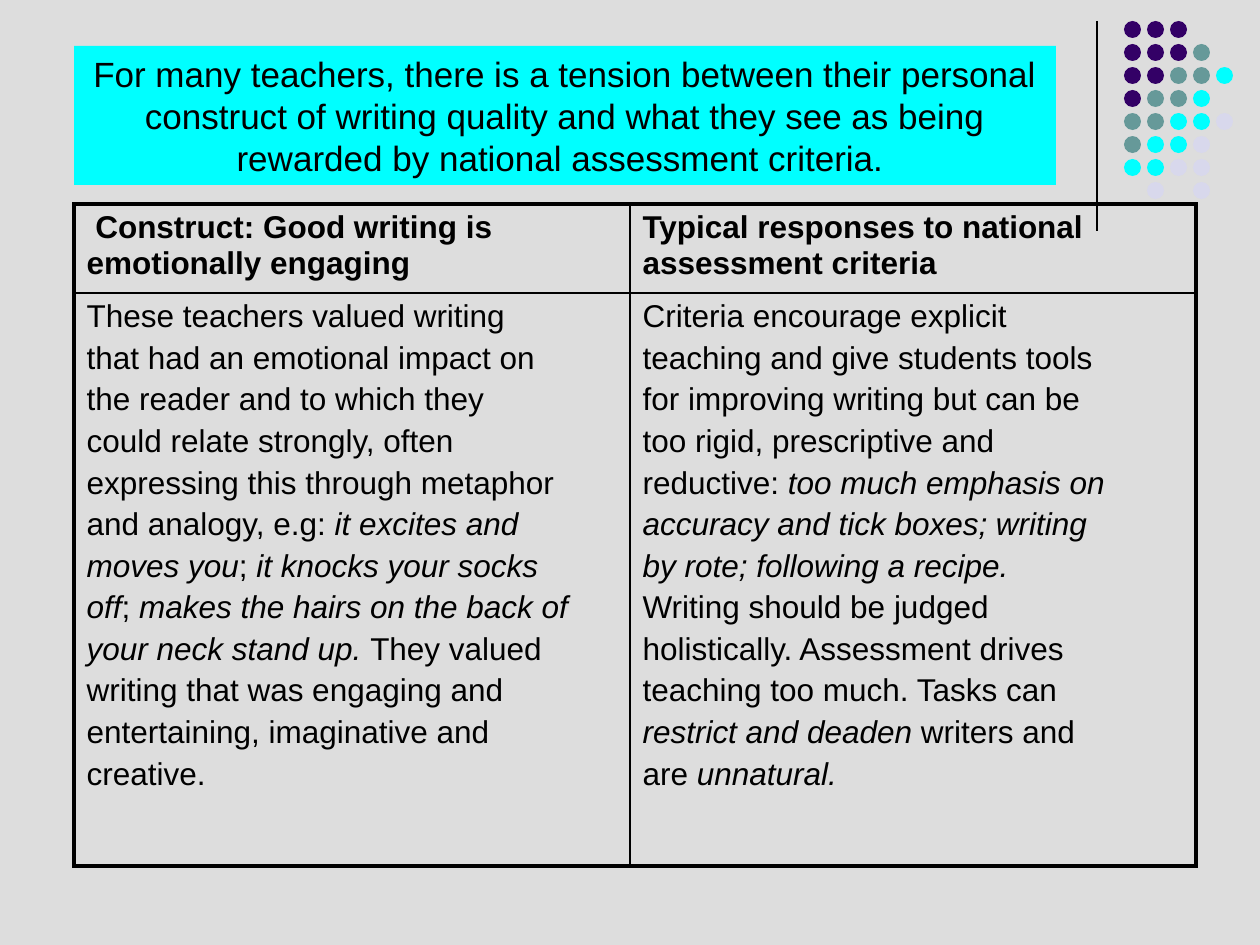
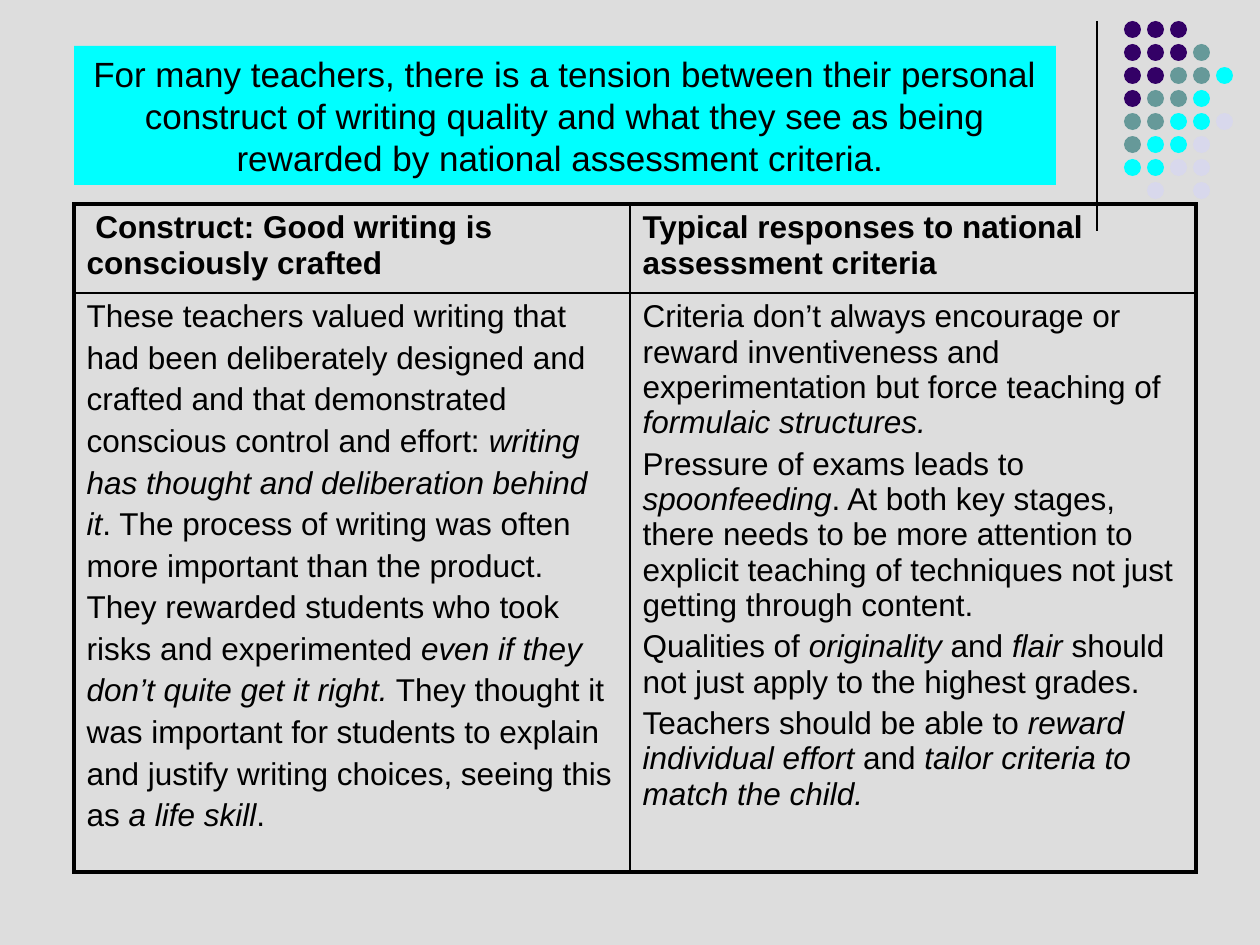
from dataclasses import dataclass

from pptx import Presentation
from pptx import util as u
from pptx.dml.color import RGBColor
from pptx.enum import shapes, text
from pptx.oxml import ns, xmlchemy

# Content: *asterisks* enclose italic wording
TITLE = ("For many teachers, there is a tension between their personal construct of writing "
         "quality and what they see as being rewarded by national assessment criteria. ")
RESPONSES_HEADING = "Typical responses to national assessment criteria"

SLIDES = [
    {
        "headings": [" Construct: Good writing is emotionally engaging", RESPONSES_HEADING],
        "bodies": [
            [
                "These teachers valued writing",
                "that had an emotional impact on",
                "the reader and to which they",
                "could relate strongly, often",
                "expressing this through metaphor",
                "and analogy, e.g: *it excites and*",
                "*moves you*; *it knocks your socks*",
                "*off*; *makes the hairs on the back of*",
                "*your neck stand up. *They valued",
                "writing that was engaging and",
                "entertaining, imaginative and",
                "creative.",
            ],
            [
                "Criteria encourage explicit",
                "teaching and give students tools",
                "for improving writing but can be",
                "too rigid, prescriptive and",
                "reductive: *too much emphasis on*",
                "*accuracy and tick boxes; writing*",
                "*by rote; following a recipe.*",
                "Writing should be judged",
                "holistically. Assessment drives",
                "teaching too much. Tasks can",
                "*restrict and deaden* writers and",
                "are *unnatural.*",
            ],
        ],
        "row_heights": [89, 573],
    },
    {
        "headings": [" Construct: Good writing is consciously crafted", RESPONSES_HEADING],
        "bodies": [
            [
                "These teachers valued writing that",
                "had been deliberately designed and",
                "crafted and that demonstrated",
                "conscious control and effort: *writing*",
                "*has thought and deliberation behind*",
                "*it*. The process of writing was often",
                "more important than the product.",
                "They rewarded students who took",
                "risks and experimented *even if they*",
                "*don’t quite get it right.* They thought it",
                "was important for students to explain",
                "and justify writing choices, seeing this",
                "as *a life skill*.",
            ],
            [
                "Criteria don’t always encourage or reward inventiveness and experimentation "
                "but force teaching of *formulaic structures.*",
                "Pressure of exams leads to *spoonfeeding*. At both key stages, there needs to be "
                "more attention to explicit teaching of techniques not just getting through content.",
                "Qualities of *originality* and *flair *should not just apply to the highest grades.",
                "Teachers should be able to *reward individual effort *and"
                "* tailor criteria to match the child.*",
            ],
        ],
        "row_heights": [89, 579],
    },
]

# Dot ornament: one letter per dot, naming its colour
DOT_ROWS = ["PPP", "PPPT", "PPTTC", "PTTC", "TTCCL", "TCCL", "CCLL", " L L"]


@dataclass(frozen=True)
class Theme:
    font: str = "Arial"
    title_size: int = 20
    table_size: int = 18
    background: str = "DDDDDD"
    ink: str = "000000"
    purple: str = "330066"
    teal: str = "669999"
    cyan: str = "00FFFF"
    lilac: str = "D8D8EC"
    rule: float = 0.75
    inner_border: float = 1
    outer_border: float = 2.25


THEME = Theme()
DOT_COLOURS = {"P": THEME.purple, "T": THEME.teal, "C": THEME.cyan, "L": THEME.lilac}

# Geometry in px
PX_PER_INCH = 126
SLIDE_SIZE = (1260, 945)
TITLE_BOX = (74, 46, 982, 139)
TABLE_LEFT, TABLE_TOP = 74, 204
COLUMN_WIDTHS = [556, 566]
RULE_X, RULE_TOP, RULE_BOTTOM = 1097, 21, 231
DOT_LEFT, DOT_TOP, DOT_PITCH, DOT_SIZE = 1124, 21, 23, 17


def px(*lengths):
    return [u.Emu(round(length * u.Inches(1) / PX_PER_INCH)) for length in lengths]


def colour(value):
    return RGBColor.from_string(value)


def write(paragraph, marked_text, size, space_before, bold=False):
    paragraph.space_before = u.Pt(space_before)
    for index, part in enumerate(marked_text.split("*")):
        if part:
            run = paragraph.add_run()
            run.text = part
            run.font.name = THEME.font
            run.font.size = u.Pt(size)
            run.font.bold = bold
            run.font.italic = index % 2 == 1
            run.font.color.rgb = colour(THEME.ink)


# Shared ornament, moved from a slide to its layout
def decorate_layout(slide):
    layout = slide.slide_layout
    layout.background.fill.solid()
    layout.background.fill.fore_color.rgb = colour(THEME.background)

    rule = slide.shapes.add_connector(
        shapes.MSO_CONNECTOR.STRAIGHT, *px(RULE_X, RULE_TOP, RULE_X, RULE_BOTTOM))
    rule.line.color.rgb = colour(THEME.ink)
    rule.line.width = u.Pt(THEME.rule)
    xmlchemy.OxmlElement  # effect list below switches the connector shadow off
    rule.element.spPr.append(xmlchemy.OxmlElement("a:effectLst"))

    dots = slide.shapes.add_group_shape()
    for row, letters in enumerate(DOT_ROWS):
        for column, letter in enumerate(letters):
            if letter in DOT_COLOURS:
                dot = dots.shapes.add_shape(shapes.MSO_SHAPE.OVAL, *px(
                    DOT_LEFT + column * DOT_PITCH, DOT_TOP + row * DOT_PITCH, DOT_SIZE, DOT_SIZE))
                dot.shadow.inherit = False
                dot.fill.solid()
                dot.fill.fore_color.rgb = colour(DOT_COLOURS[letter])
                dot.line.fill.background()

    tree = layout.shapes.element
    for ornament in (rule, dots):
        tree.append(ornament.element)
    for number, properties in enumerate(tree.iter(ns.qn("p:cNvPr")), 1):
        properties.set("id", str(number))


def add_title(slide):
    title = slide.shapes.title
    title.left, title.top, title.width, title.height = px(*TITLE_BOX)
    title.fill.solid()
    title.fill.fore_color.rgb = colour(THEME.cyan)
    frame = title.text_frame
    frame.word_wrap = True
    frame.auto_size = text.MSO_AUTO_SIZE.NONE
    frame.vertical_anchor = text.MSO_ANCHOR.TOP
    paragraph = frame.paragraphs[0]
    paragraph.alignment = text.PP_ALIGN.CENTER
    write(paragraph, TITLE, THEME.title_size, THEME.title_size * 0.5)


def add_borders(cell, row, column):
    properties = cell._tc.get_or_add_tcPr()
    outer_sides = {"L": column == 0, "R": column == 1, "T": row == 0, "B": row == 1}
    for index, (side, is_outer) in enumerate(outer_sides.items()):
        width = THEME.outer_border if is_outer else THEME.inner_border
        line = xmlchemy.OxmlElement(f"a:ln{side}")
        line.set("w", str(u.Pt(width)))
        fill = xmlchemy.OxmlElement("a:solidFill")
        ink = xmlchemy.OxmlElement("a:srgbClr")
        ink.set("val", THEME.ink)
        fill.append(ink)
        line.append(fill)
        properties.insert(index, line)


def add_comparison(slide, content):
    heights = content["row_heights"]
    table = slide.shapes.add_table(2, 2, *px(
        TABLE_LEFT, TABLE_TOP, sum(COLUMN_WIDTHS), sum(heights))).table
    table.first_row = table.horz_banding = False
    for column, width in zip(table.columns, px(*COLUMN_WIDTHS)):
        column.width = width
    for row, height in zip(table.rows, px(*heights)):
        row.height = height

    rows = [[[heading] for heading in content["headings"]], content["bodies"]]
    for row, cells in enumerate(rows):
        for column, lines in enumerate(cells):
            cell = table.cell(row, column)
            cell.fill.background()
            add_borders(cell, row, column)
            frame = cell.text_frame
            for index, line in enumerate(lines):
                paragraph = frame.add_paragraph() if index else frame.paragraphs[0]
                write(paragraph, line, THEME.table_size, THEME.table_size * 0.2, bold=row == 0)


def main():
    presentation = Presentation()
    presentation.slide_width, presentation.slide_height = px(*SLIDE_SIZE)
    title_only = presentation.slide_layouts[5]
    for index, content in enumerate(SLIDES):
        slide = presentation.slides.add_slide(title_only)
        if index == 0:
            decorate_layout(slide)
        add_title(slide)
        add_comparison(slide, content)
    presentation.save("out.pptx")


if __name__ == "__main__":
    main()
